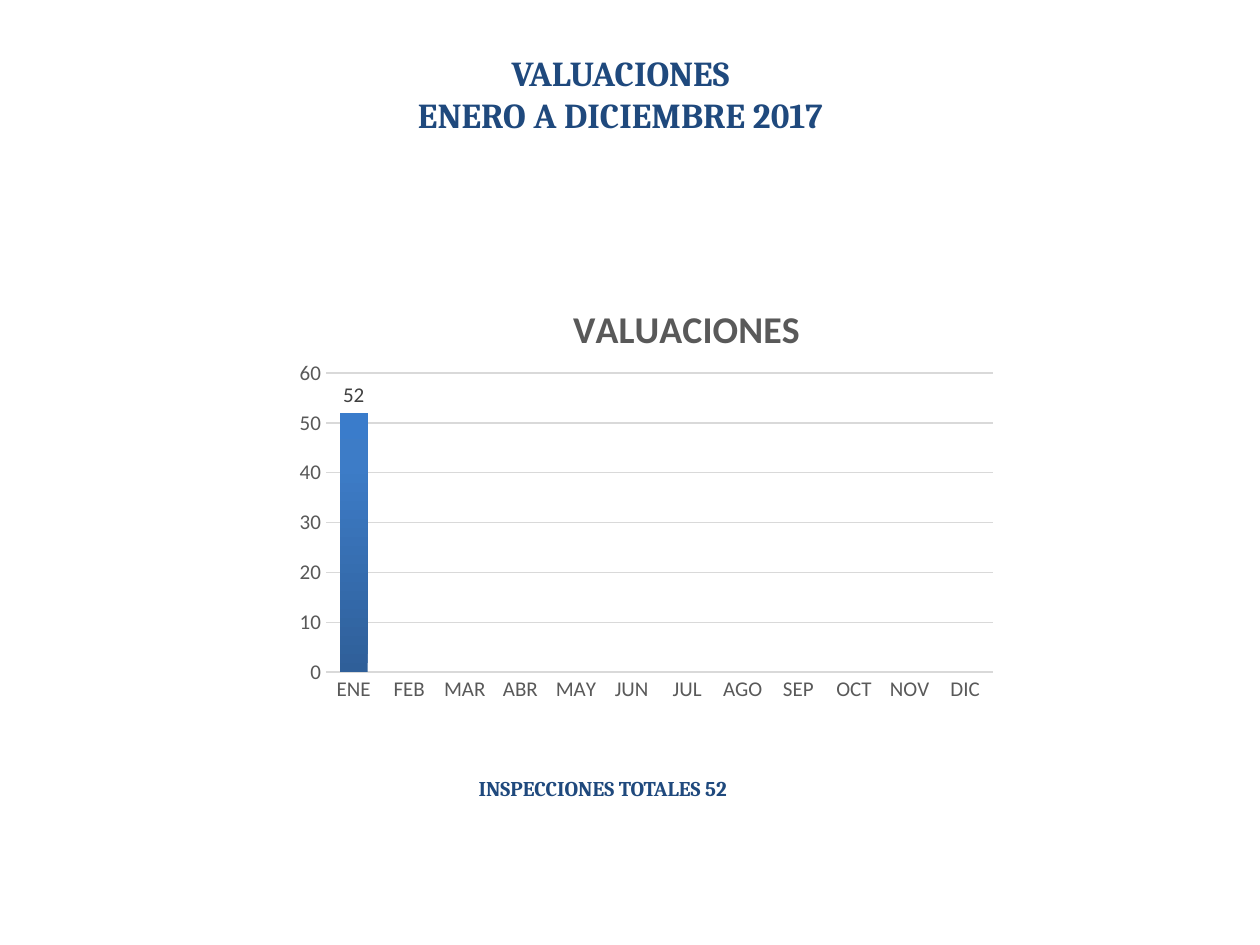
from lxml.etree import SubElement
from pptx import Presentation
from pptx.chart.data import CategoryChartData
from pptx.dml.color import RGBColor
from pptx.enum.chart import XL_CHART_TYPE as ChartType
from pptx.enum.chart import XL_LABEL_POSITION as LabelPos
from pptx.enum.chart import XL_TICK_MARK as TickMark
from pptx.enum.text import PP_ALIGN as Align
from pptx.oxml import parse_xml
from pptx.oxml.ns import nsdecls, qn
from pptx.util import Inches, Pt

NAVY = RGBColor(0x1F, 0x49, 0x7D)
GRAY = RGBColor(0x59, 0x59, 0x59)
DARK = RGBColor(0x40, 0x40, 0x40)
LIGHT = RGBColor(0xD9, 0xD9, 0xD9)
BAR_STOPS = [
    (0, RGBColor(0x2F, 0x5F, 0x99)),
    (80, RGBColor(0x3D, 0x7C, 0xC7)),
    (100, RGBColor(0x3A, 0x7C, 0xCB)),
]
MONTHS = ["ENE", "FEB", "MAR", "ABR", "MAY", "JUN",
          "JUL", "AGO", "SEP", "OCT", "NOV", "DIC"]
VALUES = [52] + [None] * 11


def set_font(font, name, size, color, bold=False):
    font.name, font.size, font.bold = name, Pt(size), bold
    font.color.rgb = color


def add_heading(slide, box, lines, size, align=Align.LEFT, wrap=True):
    tf = slide.shapes.add_textbox(*map(Inches, box)).text_frame
    tf.word_wrap = wrap
    for i, line in enumerate(lines):
        p = tf.add_paragraph() if i else tf.paragraphs[0]
        p.alignment = align
        r = p.add_run()
        r.text = line
        set_font(r.font, "Cambria", size, NAVY, bold=True)


def set_layout(element, **shares):
    """Place a chart part by shares of the chart's size."""
    layout = element.find(qn("c:layout"))
    if layout is None:
        layout = parse_xml(f"<c:layout {nsdecls('c')}/>")
        tx = element.find(qn("c:tx"))
        if tx is None:
            element.insert(0, layout)
        else:
            tx.addnext(layout)
    manual = SubElement(layout, qn("c:manualLayout"))
    if "w" in shares:
        SubElement(manual, qn("c:layoutTarget")).set("val", "inner")
    for mode in ("xMode", "yMode"):
        SubElement(manual, qn(f"c:{mode}")).set("val", "edge")
    for key, share in shares.items():
        SubElement(manual, qn(f"c:{key}")).set("val", str(share))


def fill_upward(fill, stops):
    """Gradient that runs from the foot of the bar to its top."""
    fill.gradient()
    fill.gradient_angle = 90
    gs_list = fill.gradient_stops[0]._gs.getparent()
    for gs in list(gs_list):
        gs_list.remove(gs)
    for percent, color in stops:
        gs = SubElement(gs_list, qn("a:gs"), pos=str(percent * 1000))
        SubElement(gs, qn("a:srgbClr"), val=str(color))


def style_axis(axis):
    axis.major_tick_mark = axis.minor_tick_mark = TickMark.NONE
    set_font(axis.tick_labels.font, "Calibri", 12, GRAY)


def add_valuations_chart(slide, box):
    data = CategoryChartData()
    data.categories = MONTHS
    data.add_series("Series 1", VALUES)
    chart = slide.shapes.add_chart(
        ChartType.COLUMN_CLUSTERED, *map(Inches, box), data).chart
    chart.has_legend = False
    chart.font.name, chart.font.size = "Calibri", Pt(10)

    chart.has_title = True
    r = chart.chart_title.text_frame.paragraphs[0].add_run()
    r.text = "VALUACIONES"
    set_font(r.font, "Calibri", 21.6, GRAY, bold=True)
    set_layout(chart.chart_title._element, x=0.39, y=0.06)
    plot_area = chart._chartSpace.chart.plotArea
    set_layout(plot_area, x=0.057, y=0.237, w=0.924, h=0.676)

    months, values = chart.category_axis, chart.value_axis
    for axis in (months, values):
        style_axis(axis)
    months.format.line.color.rgb = LIGHT
    months.format.line.width = Pt(1)
    values.format.line.fill.background()
    values.minimum_scale, values.maximum_scale, values.major_unit = 0, 60, 10
    grid = values.major_gridlines.format.line
    grid.color.rgb, grid.width = LIGHT, Pt(0.75)

    plot = chart.plots[0]
    plot.gap_width, plot.overlap, plot.vary_by_categories = 100, -24, False
    fill_upward(plot.series[0].format.fill, BAR_STOPS)
    plot.has_data_labels = True
    labels = plot.data_labels
    labels.show_value, labels.position = True, LabelPos.OUTSIDE_END
    set_font(labels.font, "Calibri", 12, DARK)


def main():
    prs = Presentation()
    prs.slide_width, prs.slide_height = Inches(10), Inches(7.5)
    slide = prs.slides.add_slide(prs.slide_layouts[6])
    add_heading(slide, (3.7, 6.11, 2.44, 0.3), ["INSPECCIONES TOTALES 52"], 12)
    add_heading(slide, (3.12, 0.36, 3.61, 0.77),
                ["VALUACIONES", "ENERO A DICIEMBRE 2017"], 20,
                Align.CENTER, wrap=False)
    add_valuations_chart(slide, (2.26, 2.13, 5.73, 3.51))
    prs.save("out.pptx")


if __name__ == "__main__":
    main()
